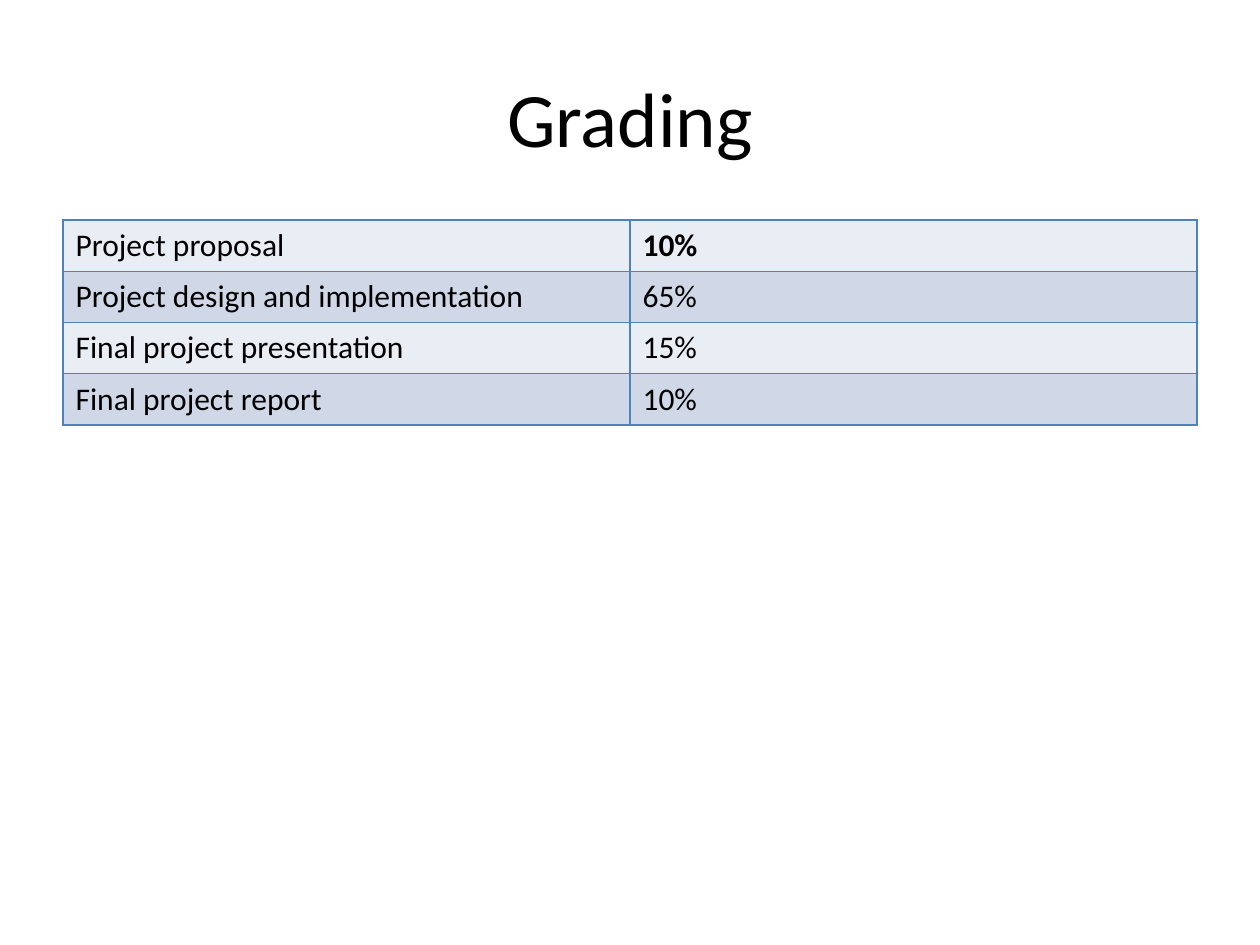
import pptx
import pptx.dml.color
import pptx.enum.text
import pptx.oxml
import pptx.oxml.ns
import pptx.util

PX = 914400 / 126
COLORS = {"text": "000000", "border": "4F81BD", "odd": "E9EDF4", "even": "D0D8E8"}
GRADES = [
    ("Project proposal", "10%"),
    ("Project design and implementation", "65%"),
    ("Final project presentation", "15%"),
    ("Final project report", "10%"),
]


def emu(px):
    """Turn pixels into EMU."""
    return pptx.util.Emu(round(px * PX))


def rgb(name):
    """Look up a named colour."""
    return pptx.dml.color.RGBColor.from_string(COLORS[name])


def write(frame, text, size, bold=False):
    """Put one formatted run of text into a text frame."""
    run = frame.paragraphs[0].add_run()
    run.text = text
    font_format = {"name": "Calibri", "size": pptx.util.Pt(size), "bold": bold}
    for attribute, value in font_format.items():
        setattr(run.font, attribute, value)
    run.font.color.rgb = rgb("text")


def add_borders(cell):
    """Draw a one-point line on each side of a cell."""
    properties = cell._tc.get_or_add_tcPr()
    for position, side in enumerate(("lnL", "lnR", "lnT", "lnB")):
        line = pptx.oxml.parse_xml(
            f'<a:{side} {pptx.oxml.ns.nsdecls("a")} w="12700"><a:solidFill>'
            f'<a:srgbClr val="{COLORS["border"]}"/></a:solidFill></a:{side}>'
        )
        properties.insert(position, line)


def place_title(slide, left, top, width, height):
    """Place the centred slide title in its box."""
    title = slide.shapes.title
    box = {"left": left, "top": top, "width": width, "height": height}
    for attribute, value in box.items():
        setattr(title, attribute, emu(value))
    frame = title.text_frame
    frame.vertical_anchor = pptx.enum.text.MSO_ANCHOR.MIDDLE
    frame.paragraphs[0].alignment = pptx.enum.text.PP_ALIGN.CENTER
    write(frame, "Grading", 44)


def place_grades(slide, left, top, width, height):
    """Place the grading table, with equal rows and columns, in its box."""
    box = [emu(length) for length in (left, top, width, height)]
    grades = slide.shapes.add_table(len(GRADES), len(GRADES[0]), *box).table
    grades.first_row = False
    grades.horz_banding = False
    for row, entries in enumerate(GRADES):
        for column, entry in enumerate(entries):
            cell = grades.cell(row, column)
            cell.fill.solid()
            cell.fill.fore_color.rgb = rgb("even" if row % 2 else "odd")
            add_borders(cell)
            write(cell.text_frame, entry, 18, bold=(row, column) == (0, 1))


def main():
    """Build and save the grading slide."""
    deck = pptx.Presentation()
    deck.slide_width, deck.slide_height = emu(1260), emu(945)
    slide = deck.slides.add_slide(deck.slide_layouts[5])
    place_title(slide, 63, 38, 1134, 158)
    place_grades(slide, 63, 220, 1134, 205)
    deck.save("out.pptx")


if __name__ == "__main__":
    main()
